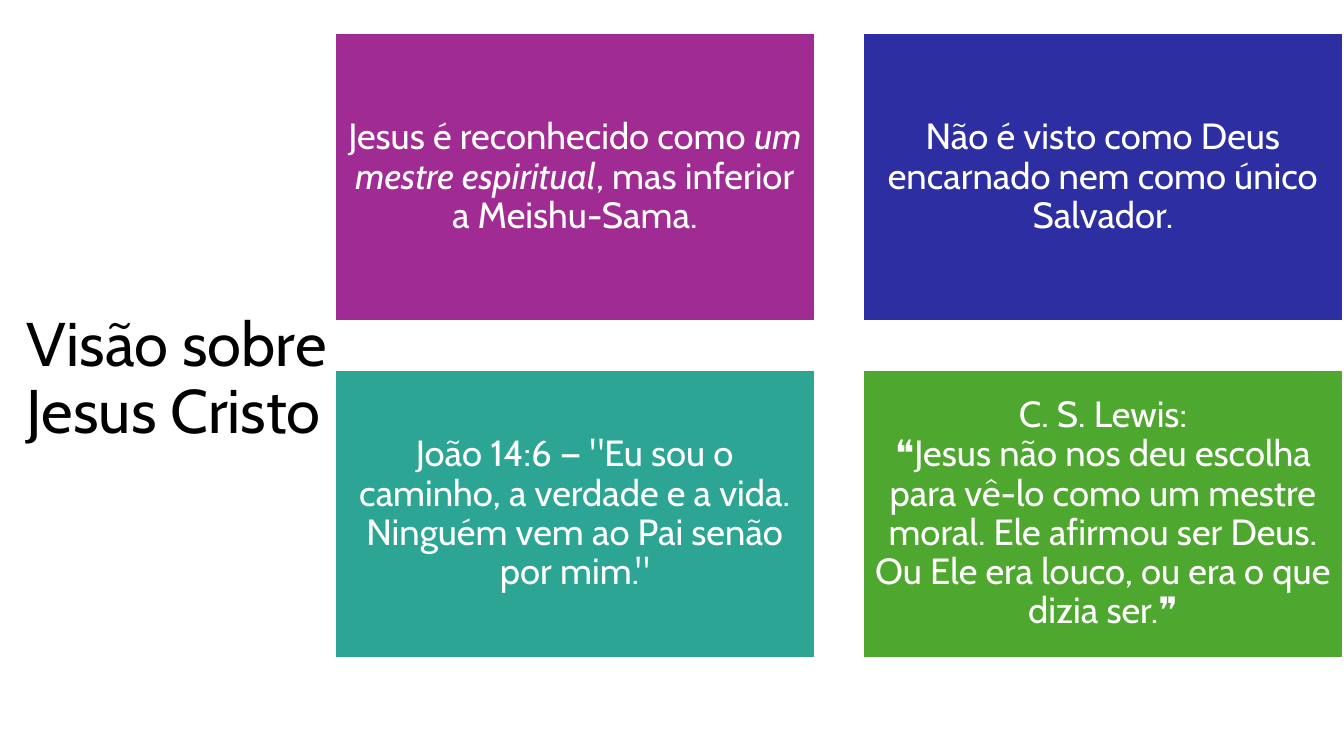
from dataclasses import dataclass

from pptx import Presentation
from pptx.dml.color import RGBColor
from pptx.enum.shapes import MSO_SHAPE
from pptx.enum.text import MSO_ANCHOR as Anchor, PP_ALIGN as Align
from pptx.slide import Slide
from pptx.text.text import TextFrame
from pptx.util import Cm, Pt


@dataclass(frozen=True)
class Theme:
    font: str = "Cabin"
    title_size: int = 44
    card_size: int = 26
    black: str = "000000"
    white: str = "FFFFFF"
    purple: str = "A02B93"
    blue: str = "2C2EA2"
    teal: str = "2DA594"
    green: str = "4EA72E"


@dataclass(frozen=True)
class Card:
    fill: str
    text: str


THEME = Theme()
COLUMNS = 2
CARD_LEFT, CARD_TOP = 8.43, 0.84
CARD_WIDTH, CARD_HEIGHT = 12.12, 7.26
COLUMN_STEP, ROW_STEP = 13.31, 8.48
CARD_INSET = 0.28

CARDS = [
    Card(THEME.purple, "Jesus é reconhecido como *um mestre espiritual*, mas inferior a Meishu-Sama."),
    Card(THEME.blue, "Não é visto como Deus encarnado nem como único Salvador."),
    Card(THEME.teal, 'João 14:6 — "Eu sou o caminho, a verdade e a vida. Ninguém vem ao Pai senão por mim."'),
    Card(
        THEME.green,
        "C. S. Lewis:\n❝Jesus não nos deu escolha para vê-lo como um mestre moral. "
        "Ele afirmou ser Deus. Ou Ele era louco, ou era o que dizia ser.❞",
    ),
]


def write_text(frame: TextFrame, text: str, *, size: int, color: str,
               align: Align = Align.LEFT, anchor: Anchor = Anchor.TOP) -> None:
    """Write one paragraph; *asterisks* mark italics and a newline breaks the line."""
    frame.word_wrap = True
    frame.vertical_anchor = anchor
    paragraph = frame.paragraphs[0]
    paragraph.alignment = align
    paragraph.line_spacing = 0.9
    for line_number, line in enumerate(text.split("\n")):
        if line_number:
            paragraph.add_line_break()
        for part_number, part in enumerate(line.split("*")):
            run = paragraph.add_run()
            run.text = part
            run.font.name = THEME.font
            run.font.size = Pt(size)
            run.font.color.rgb = RGBColor.from_string(color)
            if part_number % 2:
                run.font.italic = True


def add_title(slide: Slide, text: str) -> None:
    title = slide.shapes.add_textbox(Cm(0.43), Cm(7.77), Cm(9.7), Cm(16.08))
    write_text(title.text_frame, text, size=THEME.title_size, color=THEME.black)


def add_card(slide: Slide, card: Card, row: int, column: int) -> None:
    panel = slide.shapes.add_shape(
        MSO_SHAPE.RECTANGLE,
        Cm(CARD_LEFT + column * COLUMN_STEP), Cm(CARD_TOP + row * ROW_STEP),
        Cm(CARD_WIDTH), Cm(CARD_HEIGHT),
    )
    panel.shadow.inherit = False
    panel.fill.solid()
    panel.fill.fore_color.rgb = RGBColor.from_string(card.fill)
    panel.line.color.rgb = RGBColor.from_string(THEME.white)
    panel.line.width = Pt(1.5)
    frame = panel.text_frame
    frame.margin_left = frame.margin_right = Cm(CARD_INSET)
    frame.margin_top = frame.margin_bottom = Cm(CARD_INSET)
    write_text(frame, card.text, size=THEME.card_size, color=THEME.white,
               align=Align.CENTER, anchor=Anchor.MIDDLE)


def main() -> None:
    deck = Presentation()
    deck.slide_width, deck.slide_height = Cm(33.87), Cm(19.05)
    slide = deck.slides.add_slide(deck.slide_layouts[6])
    add_title(slide, "Visão sobre Jesus Cristo")
    for index, card in enumerate(CARDS):
        add_card(slide, card, *divmod(index, COLUMNS))
    deck.save("out.pptx")


if __name__ == "__main__":
    main()
